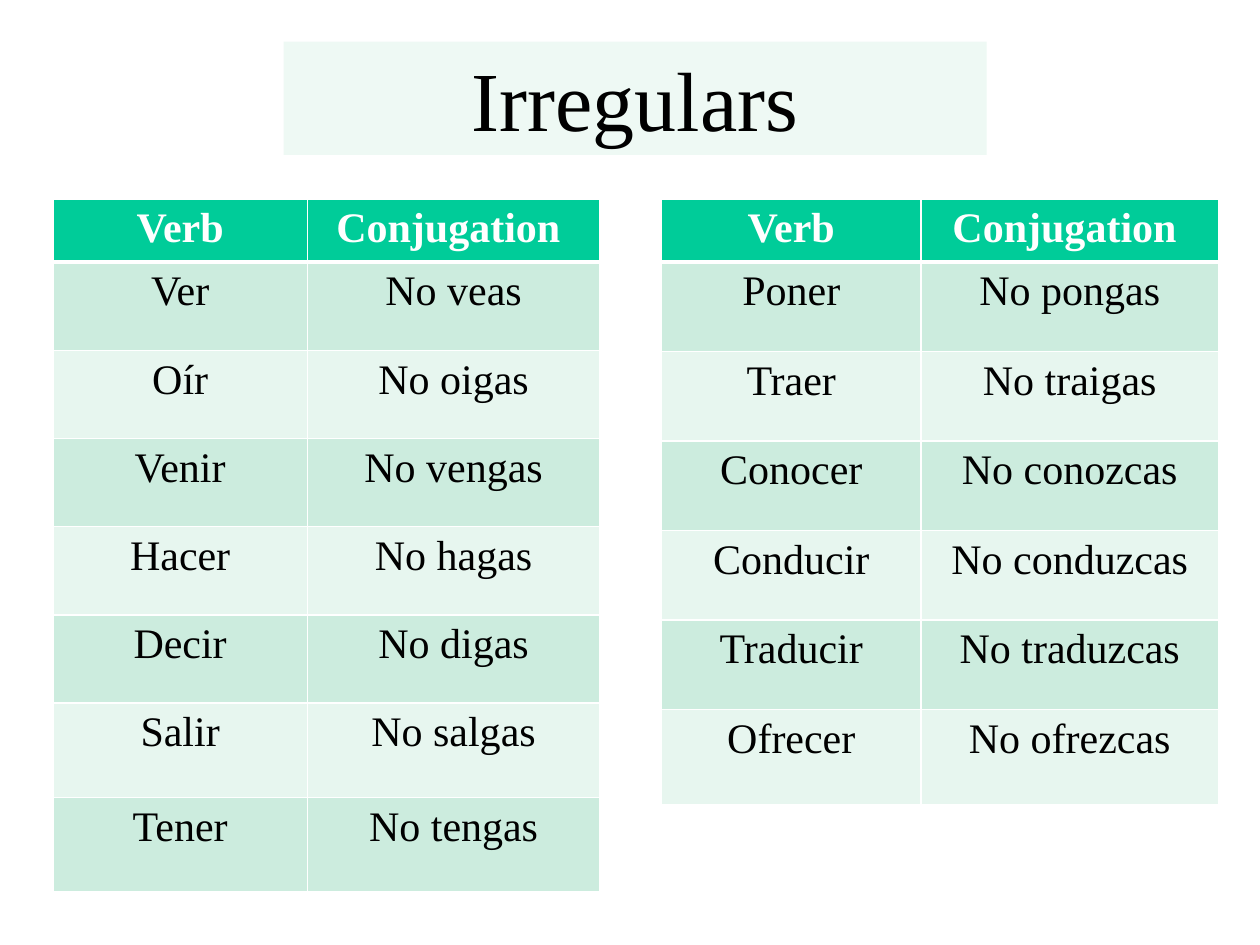
from lxml import etree
from pptx import Presentation
from pptx.dml.color import RGBColor
from pptx.enum import shapes, text
from pptx.oxml.ns import qn
from pptx.util import Inches, Pt

COLORS = {
    "title": "EEF9F4", "header": "00CC99", "odd": "CCECDE", "even": "E7F6EF",
    "ink": "000000", "white": "FFFFFF",
}
RGB = {name: RGBColor.from_string(value) for name, value in COLORS.items()}
FONT = "Times New Roman"


def style(p, size, color, bold=False):
    p.alignment = text.PP_ALIGN.CENTER
    p.font.name, p.font.size, p.font.bold = FONT, Pt(size), bold
    p.font.color.rgb = RGB[color]


def add_borders(cell, bottom):
    tcPr = cell._tc.get_or_add_tcPr()
    sides = (("a:lnL", 1), ("a:lnR", 1), ("a:lnT", 1), ("a:lnB", bottom))
    for i, (side, width) in enumerate(sides):
        ln = etree.Element(qn(side), w=str(Pt(width)))
        fill = etree.SubElement(ln, qn("a:solidFill"))
        etree.SubElement(fill, qn("a:srgbClr"), val=COLORS["white"])
        tcPr.insert(i, ln)


prs = Presentation()
prs.slide_width, prs.slide_height = Inches(10), Inches(7.5)
s = prs.slides.add_slide(prs.slide_layouts[6])

# Title band
sp = s.shapes.add_shape(shapes.MSO_SHAPE.RECTANGLE, Inches(2.25), Inches(0.33),
                        Inches(5.58), Inches(0.9))
sp.shadow.inherit = False
sp.fill.solid()
sp.fill.fore_color.rgb = RGB["title"]
sp.line.fill.background()
tf = sp.text_frame
tf.word_wrap = True
tf.auto_size = text.MSO_AUTO_SIZE.SHAPE_TO_FIT_TEXT
tf.vertical_anchor = text.MSO_ANCHOR.TOP
p = tf.paragraphs[0]
p.text = "Irregulars"
style(p, 48, "ink")
before = etree.SubElement(p._p.get_or_add_pPr(), qn("a:spcBef"))
etree.SubElement(before, qn("a:spcPct"), val="50000")
p._p.pPr.insert(0, before)

# Verb tables: left, column widths, header / body / tall row heights, tall rows
HEADER = ("Verb", "Conjugation ")
TABLES = [
    (0.42, (2.02, 2.32), (0.43, 0.7, 0.75), 2, [
        ("Ver", "No veas"), ("Oír", "No oigas"), ("Venir", "No vengas"),
        ("Hacer", "No hagas"), ("Decir", "No digas"), ("Salir", "No salgas"),
        ("Tener", "No tengas")]),
    (5.25, (2.06, 2.36), (0.44, 0.71, 0.76), 1, [
        ("Poner", "No pongas"), ("Traer", "No traigas"),
        ("Conocer", "No conozcas"), ("Conducir", "No conduzcas"),
        ("Traducir", "No traduzcas"), ("Ofrecer", "No ofrezcas")]),
]
for left, widths, (head, body, tall), tall_count, verbs in TABLES:
    rows = [HEADER] + verbs
    heights = [head] + [body] * (len(verbs) - tall_count) + [tall] * tall_count
    table = s.shapes.add_table(len(rows), 2, Inches(left), Inches(1.58),
                               Inches(sum(widths)), Inches(sum(heights))).table
    for column, width in zip(table.columns, widths):
        column.width = Inches(width)
    for i, (row, height) in enumerate(zip(table.rows, heights)):
        row.height = Inches(height)
        band = "header" if i == 0 else "odd" if i % 2 else "even"
        for cell, words in zip(row.cells, rows[i]):
            cell.fill.solid()
            cell.fill.fore_color.rgb = RGB[band]
            add_borders(cell, 3 if i == 0 else 1)
            p = cell.text_frame.paragraphs[0]
            p.text = words
            style(p, 24, "ink" if i else "white", i == 0)

prs.save("out.pptx")
